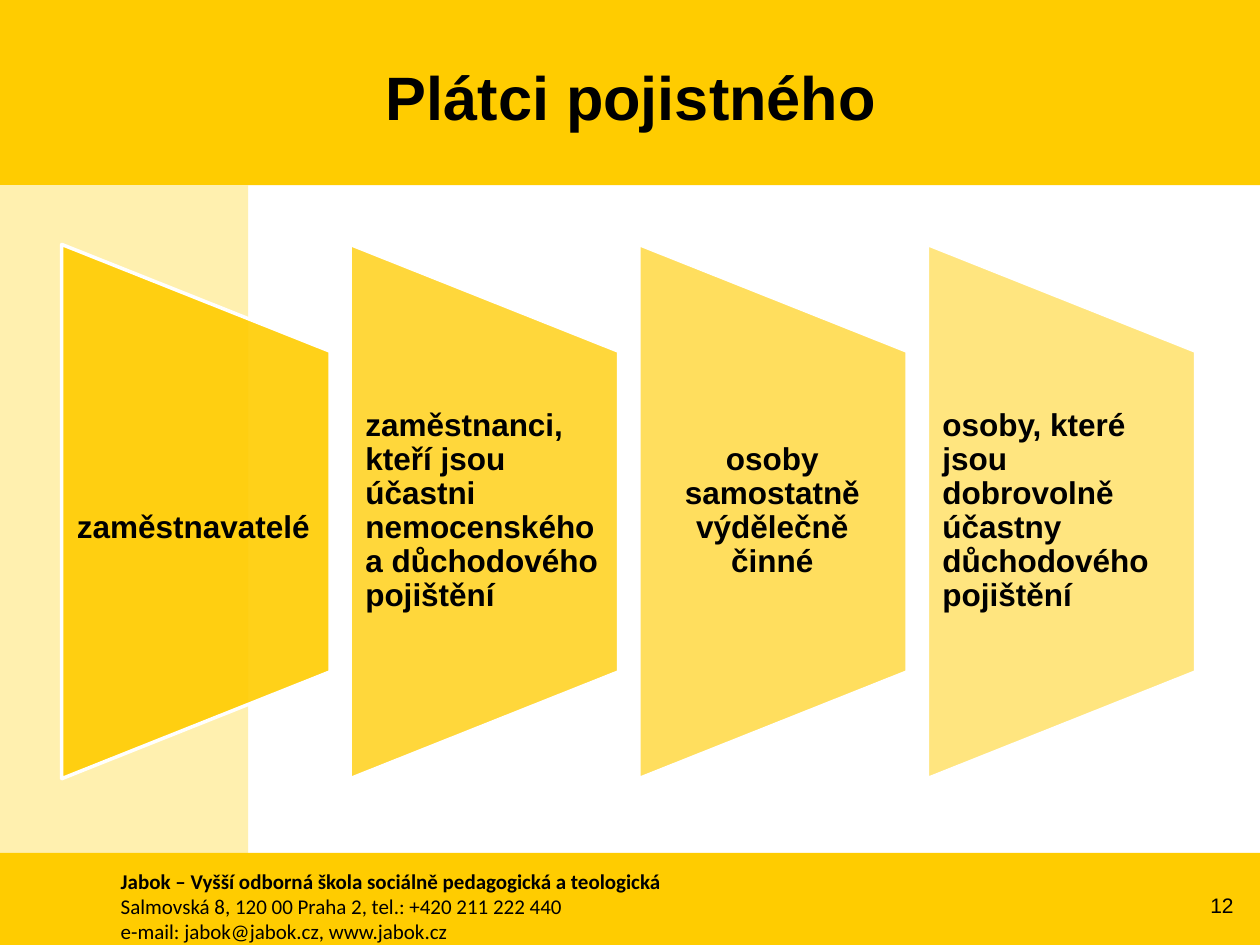
import pptx
import pptx.util
from lxml import etree
from pptx.dml.color import RGBColor
from pptx.enum.shapes import MSO_SHAPE
from pptx.enum.text import MSO_ANCHOR, PP_ALIGN
from pptx.oxml.ns import qn
from pptx.util import Inches, Pt

GOLD = RGBColor(0xFF, 0xCC, 0x00)
CREAM = RGBColor(0xFF, 0xF0, 0xAF)
WHITE = RGBColor(0xFF, 0xFF, 0xFF)
BLACK = RGBColor(0, 0, 0)

HEADING = "Plátci pojistného"
PAGE_NUMBER = "12"
SCHOOL_CONTACT = [
    ("Jabok – Vyšší odborná škola sociálně pedagogická a teologická", True),
    ("Salmovská 8, 120 00 Praha 2, tel.: +420 211 222 440", False),
    ("e-mail: jabok@jabok.cz, www.jabok.cz", False),
]
# (wording, alignment, top inset)
PAYERS = [
    ("zaměstnavatelé", PP_ALIGN.LEFT, 0.27),
    ("zaměstnanci, kteří jsou účastni nemocenského a důchodového pojištění", PP_ALIGN.LEFT, 0),
    ("osoby samostatně výdělečně činné", PP_ALIGN.CENTER, 0),
    ("osoby, které jsou dobrovolně účastny důchodového pojištění", PP_ALIGN.LEFT, 0),
]
# (left, top, width, height, colour)
BANDS = [
    (0, 0, 10, 1.47, GOLD),
    (0, 1.47, 1.97, 5.3, CREAM),
    (0, 6.77, 10, 0.73, GOLD),
]

FIRST_LEFT, PITCH = 0.49, 2.29
PANEL_WIDTH, PANEL_HEIGHT, PANEL_MIDDLE = 2.13, 4.24, 4.06
LABEL_HEIGHT = 2.54
FIRST_OPACITY, LAST_OPACITY = 90, 50

HEADING_FONT = {"name": "Arial", "size": Pt(35), "bold": True}
PAYER_FONT = {"name": "Arial", "size": Pt(18), "bold": True}
CONTACT_FONT = {"name": "Calibri", "size": Pt(12)}
NUMBER_FONT = {"name": "Arial", "size": Pt(12), "bold": False}


def apply_format(target, values):
    for attribute, value in values.items():
        setattr(target, attribute, value)


def write(paragraph, wording, font, align=PP_ALIGN.LEFT):
    paragraph.text = wording
    paragraph.alignment = align
    apply_format(paragraph.font, font)
    paragraph.font.color.rgb = BLACK


def add_filled(slide, preset, box, colour):
    shape = slide.shapes.add_shape(preset, *map(Inches, box))
    shape.shadow.inherit = False
    shape.fill.solid()
    shape.fill.fore_color.rgb = colour
    shape.line.fill.background()
    return shape


def add_text_frame(slide, box, anchor):
    frame = slide.shapes.add_textbox(*map(Inches, box)).text_frame
    apply_format(frame, {"word_wrap": True, "vertical_anchor": anchor})
    return frame


def add_panel(slide, left, opacity):
    """Draw a trapezoid turned a quarter, so its box is given before rotation."""
    box = (left + (PANEL_WIDTH - PANEL_HEIGHT) / 2, PANEL_MIDDLE - PANEL_WIDTH / 2,
           PANEL_HEIGHT, PANEL_WIDTH)
    panel = add_filled(slide, MSO_SHAPE.FLOWCHART_MANUAL_OPERATION, box, GOLD)
    panel.rotation = 270
    panel.line.color.rgb = WHITE
    panel.line.width = Pt(2)
    colour = panel.element.spPr.find(qn("a:solidFill")).find(qn("a:srgbClr"))
    etree.SubElement(colour, qn("a:alpha")).set("val", str(opacity * 1000))


def add_payer(slide, left, wording, align, top_inset):
    box = (left, PANEL_MIDDLE - LABEL_HEIGHT / 2, PANEL_WIDTH, LABEL_HEIGHT)
    frame = add_text_frame(slide, box, MSO_ANCHOR.MIDDLE)
    apply_format(frame, {
        "margin_left": Inches(0.12), "margin_right": Inches(0.13),
        "margin_top": Inches(top_inset), "margin_bottom": 0,
    })
    write(frame.paragraphs[0], wording, PAYER_FONT, align)
    frame.paragraphs[0].line_spacing = 0.9


def main():
    deck = pptx.Presentation()
    deck.slide_width, deck.slide_height = Inches(10), Inches(7.5)
    slide = deck.slides.add_slide(deck.slide_layouts[5])

    for *box, colour in BANDS:
        add_filled(slide, MSO_SHAPE.RECTANGLE, box, colour)

    contact = add_text_frame(slide, (0.86, 6.84, 8.19, 0.71), MSO_ANCHOR.TOP)
    for index, (wording, bold) in enumerate(SCHOOL_CONTACT):
        line = contact.add_paragraph() if index else contact.paragraphs[0]
        write(line, wording, {**CONTACT_FONT, "bold": bold})

    number = add_text_frame(slide, (9.26, 6.98, 0.63, 0.4), MSO_ANCHOR.MIDDLE)
    write(number.paragraphs[0], PAGE_NUMBER, NUMBER_FONT, PP_ALIGN.RIGHT)

    heading = slide.shapes.title
    apply_format(heading, {"left": Inches(0.51), "top": Inches(0.14),
                           "width": Inches(9), "height": Inches(1.25)})
    heading.text_frame.vertical_anchor = MSO_ANCHOR.MIDDLE
    write(heading.text_frame.paragraphs[0], HEADING, HEADING_FONT, PP_ALIGN.CENTER)
    slide.shapes.element.append(heading.element)  # in front of the gold band

    opacity_step = (FIRST_OPACITY - LAST_OPACITY) / (len(PAYERS) - 1)
    for index, payer in enumerate(PAYERS):
        left = FIRST_LEFT + index * PITCH
        add_panel(slide, left, round(FIRST_OPACITY - index * opacity_step))
        add_payer(slide, left, *payer)

    deck.save("out.pptx")


if __name__ == "__main__":
    main()
